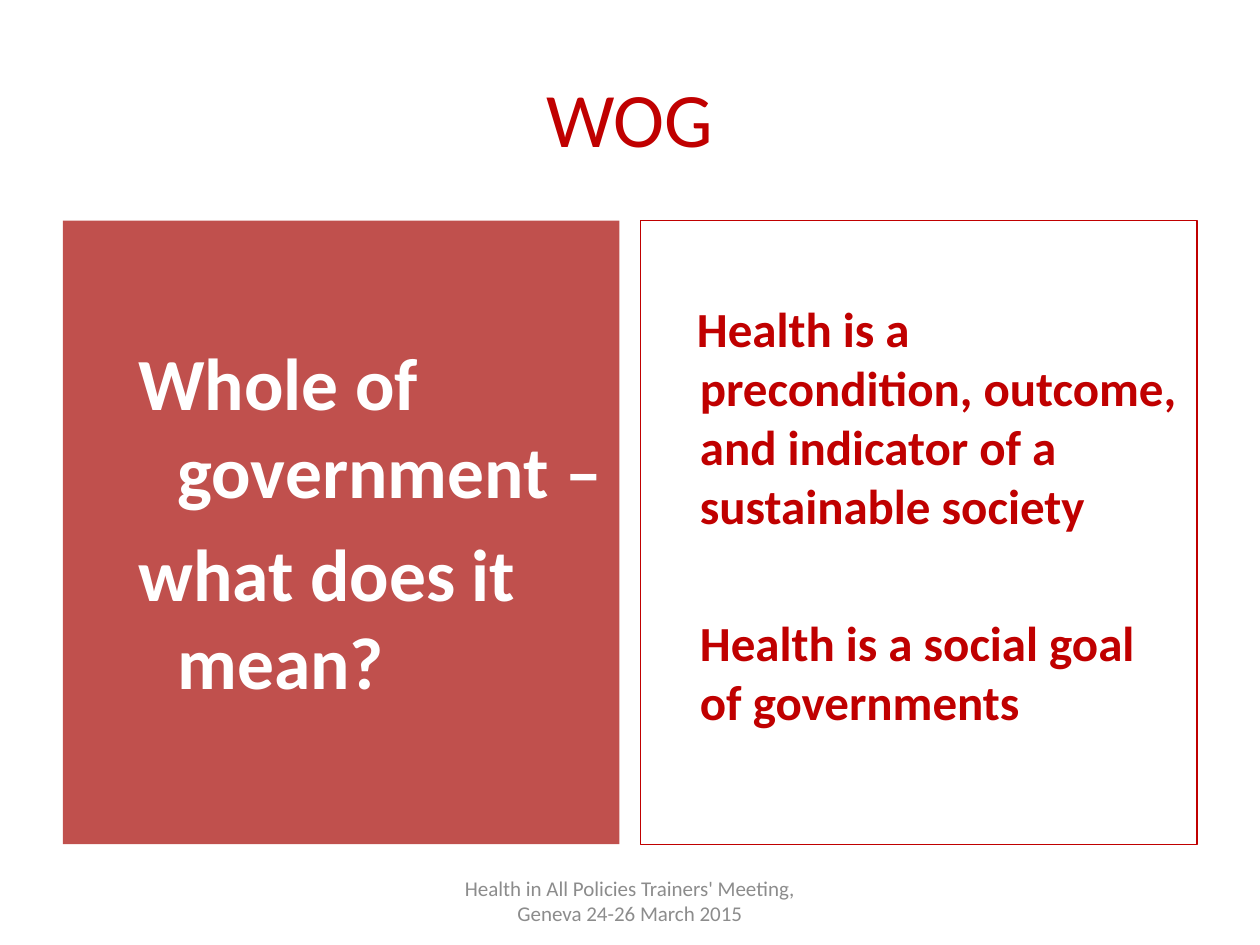
from dataclasses import dataclass

from pptx import Presentation
from pptx.dml.color import RGBColor
from pptx.enum import shapes, text
from pptx.util import Cm, Pt


@dataclass(frozen=True)
class Theme:
    font: str = "Calibri"
    red: str = "C00000"
    panel: str = "C0504D"
    white: str = "FFFFFF"
    grey: str = "8C8C8C"
    title_size: int = 44
    question_size: int = 42
    answer_size: int = 28
    footer_size: int = 12


THEME = Theme()


def write(shape, lines, size, color, bold=False, align=text.PP_ALIGN.LEFT):
    """Fill a shape with one paragraph per line, all in one style."""
    frame = shape.text_frame
    frame.word_wrap = True
    frame.text = "\n".join(lines)
    for para in frame.paragraphs:
        para.alignment = align
        for span in para.runs:
            span.font.name = THEME.font
            span.font.size = Pt(size)
            span.font.bold = bold
            span.font.color.rgb = RGBColor.from_string(color)
    return frame


def indent(para, left, first):
    props = para._p.get_or_add_pPr()
    props.set("marL", str(Cm(left)))
    props.set("indent", str(Cm(first)))


def add_label(page, box, line, size, color):
    """Add a line of text centred both ways in its box."""
    label = page.shapes.add_textbox(*map(Cm, box))
    frame = write(label, [line], size, color, align=text.PP_ALIGN.CENTER)
    frame.vertical_anchor = text.MSO_ANCHOR.MIDDLE


def add_panel(page, box, top_inset):
    panel = page.shapes.add_shape(shapes.MSO_SHAPE.RECTANGLE, *map(Cm, box))
    panel.shadow.inherit = False
    frame = panel.text_frame
    frame.vertical_anchor = text.MSO_ANCHOR.TOP
    frame.margin_top = Cm(top_inset)
    return panel


def add_question(page, box):
    panel = add_panel(page, box, top_inset=2.34)
    panel.fill.solid()
    panel.fill.fore_color.rgb = RGBColor.from_string(THEME.panel)
    panel.line.fill.background()
    lines = ["Whole of government –", "what does it mean?"]
    frame = write(panel, lines, THEME.question_size, THEME.white, bold=True)
    for para in frame.paragraphs:
        indent(para, 2.06, -0.79)
    frame.paragraphs[1].space_before = Pt(8.4)


def add_answer(page, box):
    panel = add_panel(page, box, top_inset=1.57)
    panel.fill.background()
    panel.line.color.rgb = RGBColor.from_string(THEME.red)
    panel.line.width = Pt(0.75)
    lines = [
        "Health is a precondition, outcome, and indicator of a sustainable society",
        "Health is a social goal of governments",
    ]
    frame = write(panel, lines, THEME.answer_size, THEME.red, bold=True)
    precondition, goal = frame.paragraphs
    indent(precondition, 0.95, -0.06)
    indent(goal, 0.95, 0)
    goal.space_before = Pt(45)


def build_page(page, width):
    margin, gap = 1.27, 0.42
    inner = width - 2 * margin
    panel_width = (inner - gap) / 2
    top, height = 4.45, 12.57
    footer_width = 8.04

    add_label(page, (margin, 0.76, inner, 3.18), "WOG", THEME.title_size, THEME.red)
    add_question(page, (margin, top, panel_width, height))
    add_answer(page, (margin + panel_width + gap, top, panel_width, height))
    add_label(page, ((width - footer_width) / 2, 17.65, footer_width, 1.01),
              "Health in All Policies Trainers' Meeting, Geneva 24-26 March 2015",
              THEME.footer_size, THEME.grey)


def main():
    width = 25.4
    deck = Presentation()
    deck.slide_width, deck.slide_height = Cm(width), Cm(19.05)
    page = deck.slides.add_slide(deck.slide_layouts[6])
    build_page(page, width)
    deck.save("out.pptx")


if __name__ == "__main__":
    main()
